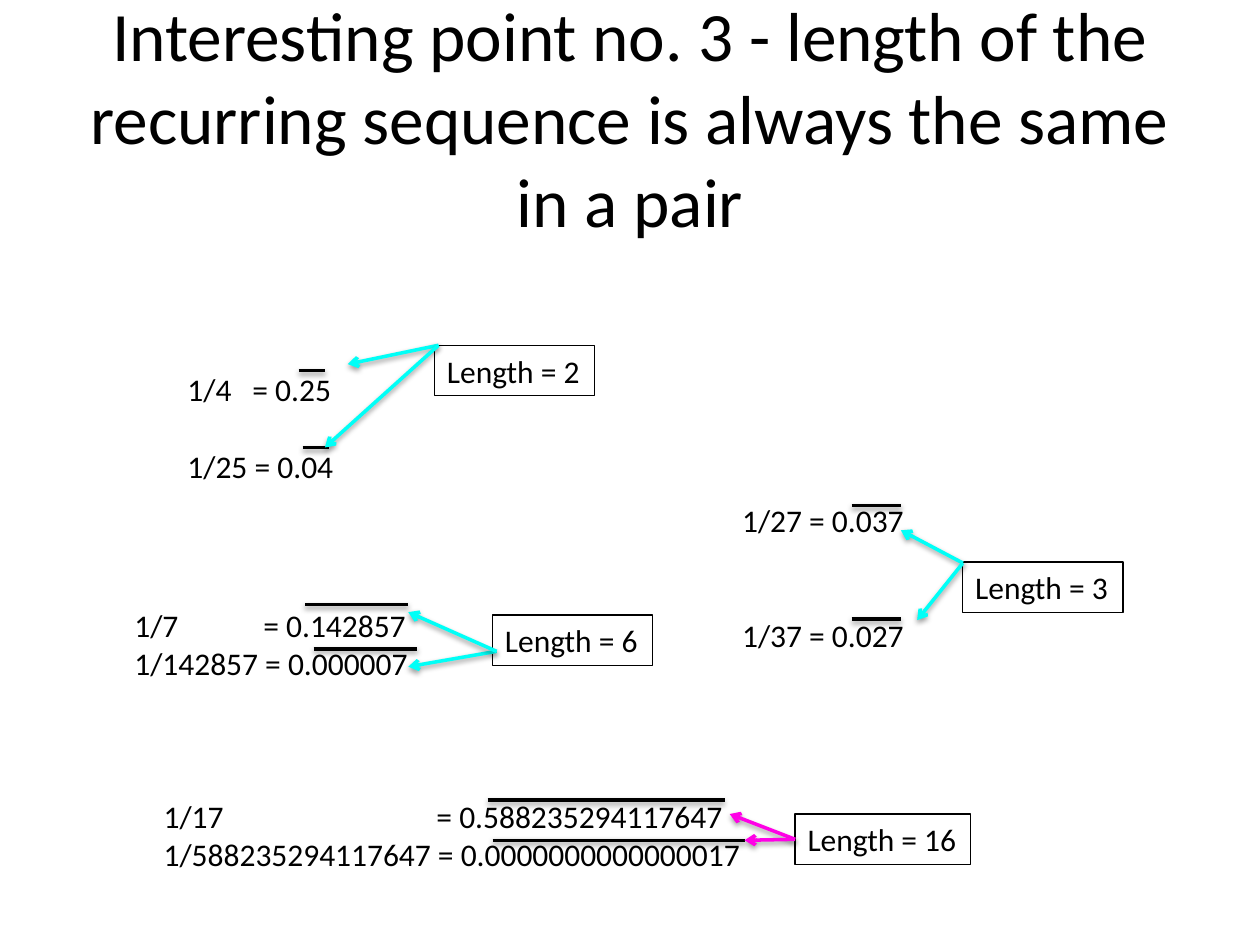
from dataclasses import dataclass

from lxml import etree
from pptx import Presentation
from pptx import util as u
from pptx.dml.color import RGBColor
from pptx.enum import shapes, text
from pptx.oxml import ns


@dataclass(frozen=True)
class Theme:
    """Colours, font and sizes of the slide."""
    font: str = "Calibri"
    ink: str = "000000"
    cyan: str = "00FFF7"
    pink: str = "FF00E6"
    title: float = 39.6
    body: float = 18
    row: float = 22
    thin: float = 0.75
    thick: float = 2


class Deck:
    """Draw each kind of element on the current slide."""

    def __init__(self, theme):
        self.theme = theme
        self.prs = Presentation()
        self.prs.slide_width, self.prs.slide_height = u.Cm(25.4), u.Cm(19.05)
        self.slide = self.prs.slides.add_slide(self.prs.slide_layouts[5])

    def style(self, para, size):
        """Format the runs of a paragraph."""
        for run in para.runs:
            run.font.name, run.font.size = self.theme.font, u.Pt(size)
            run.font.color.rgb = RGBColor.from_string(self.theme.ink)

    def node(self, parent, tag, **attrs):
        """Append a drawing element to its parent."""
        return etree.SubElement(parent, ns.qn(tag), attrs)

    def title(self, words):
        """Fill and place the title."""
        box = self.slide.shapes.title
        box.left, box.top, box.width, box.height = map(u.Cm, (1.27, 0.76, 22.86, 3.18))
        frame = box.text_frame
        frame.text = words
        frame.auto_size = text.MSO_AUTO_SIZE.NONE
        frame.vertical_anchor = text.MSO_ANCHOR.MIDDLE
        frame.paragraphs[0].alignment = text.PP_ALIGN.CENTER
        self.style(frame.paragraphs[0], self.theme.title)

    def sums(self, rows, area, gap, tab):
        """Write a pair of fractions, with a gap in rows between them."""
        frame = self.slide.shapes.add_textbox(*map(u.Cm, area)).text_frame
        frame.word_wrap = False
        frame.text = "\n".join(rows)
        for i, para in enumerate(frame.paragraphs):
            if tab:
                stops = self.node(para._p.get_or_add_pPr(), "a:tabLst")
                self.node(stops, "a:tab", pos=str(u.Cm(tab)), algn="l")
            if i and gap:
                para.space_before = u.Pt(gap * self.theme.row)
            self.style(para, self.theme.body)

    def label(self, words, left, top, width):
        """Add an outlined label."""
        box = self.slide.shapes.add_shape(
            shapes.MSO_SHAPE.RECTANGLE, *map(u.Cm, (left, top, width, 1.02)))
        box.shadow.inherit = False
        box.fill.background()
        box.line.color.rgb = RGBColor.from_string(self.theme.ink)
        box.line.width = u.Pt(self.theme.thin)
        frame = box.text_frame
        frame.word_wrap = False
        frame.text = words
        frame.paragraphs[0].alignment = text.PP_ALIGN.LEFT
        self.style(frame.paragraphs[0], self.theme.body)

    def line(self, start, end, color, arrow=False):
        """Add a shadowed line, with an arrowhead at its end if asked."""
        link = self.slide.shapes.add_connector(
            shapes.MSO_CONNECTOR.STRAIGHT, *map(u.Cm, (*start, *end)))
        link.line.color.rgb = RGBColor.from_string(color)
        link.line.width = u.Pt(self.theme.thick)
        if arrow:
            self.node(link.line._ln, "a:tailEnd", type="arrow")
        effects = self.node(link._element.spPr, "a:effectLst")
        shade = self.node(effects, "a:outerShdw", blurRad=str(u.Pt(3.1)),
                          dist=str(u.Pt(1.6)), dir="5400000", rotWithShape="0")
        tint = self.node(shade, "a:srgbClr", val=self.theme.ink)
        self.node(tint, "a:alpha", val="38000")

    def pair(self, rows, area, bars, length, box, start, tips, color, gap=0, tab=0):
        """Draw a pair with its overlines, label and arrows."""
        self.sums(rows, area, gap, tab)
        for left, right, y in bars:
            self.line((left, y), (right, y), self.theme.ink)
        self.label(f"Length = {length}", *box)
        for tip in tips:
            self.line(start, tip, color, True)


def main():
    """Build and save the slide."""
    theme = Theme()
    deck = Deck(theme)
    deck.title("Interesting point no. 3 - length of the recurring sequence "
               "is always the same in a pair")
    deck.pair(("1/4\t= 0.25", "1/25 = 0.04"), (3.53, 7.34, 3.48, 2.57),
              ((6.02, 6.55, 7.47), (6.1, 6.63, 9.02)),
              2, (8.76, 6.96, 3.23), (8.84, 6.96),
              ((7.01, 7.34), (6.55, 9.02)), theme.cyan, gap=1, tab=1.31)
    deck.pair(("1/27 = 0.037", "1/37 = 0.027"), (14.71, 9.98, 3.81, 3.33),
              ((17.17, 18.16, 10.19), (17.17, 18.16, 12.48)),
              3, (19.41, 11.33, 3.23), (19.41, 11.35),
              ((18.16, 10.69), (18.49, 12.5)), theme.cyan, gap=2)
    deck.pair(("1/7\t= 0.142857", "1/142857 = 0.000007"), (2.46, 12.09, 6.05, 1.8),
              ((6.15, 8.23, 12.19), (6.32, 8.41, 13.08)),
              6, (9.93, 12.4, 3.23), (10.01, 13.13),
              ((8.23, 13.44), (8.23, 12.34)), theme.cyan, tab=2.6)
    deck.pair(("1/17\t= 0.588235294117647", "1/588235294117647 = 0.0000000000000017"),
              (3.05, 15.95, 12.42, 1.8),
              ((9.83, 14.61, 16.13), (9.93, 15.01, 16.94)),
              16, (16.03, 16.41, 3.53), (16.03, 16.92),
              ((14.71, 16.41), (15.01, 16.94)), theme.pink, tab=5.5)
    deck.prs.save("out.pptx")


if __name__ == "__main__":
    main()
